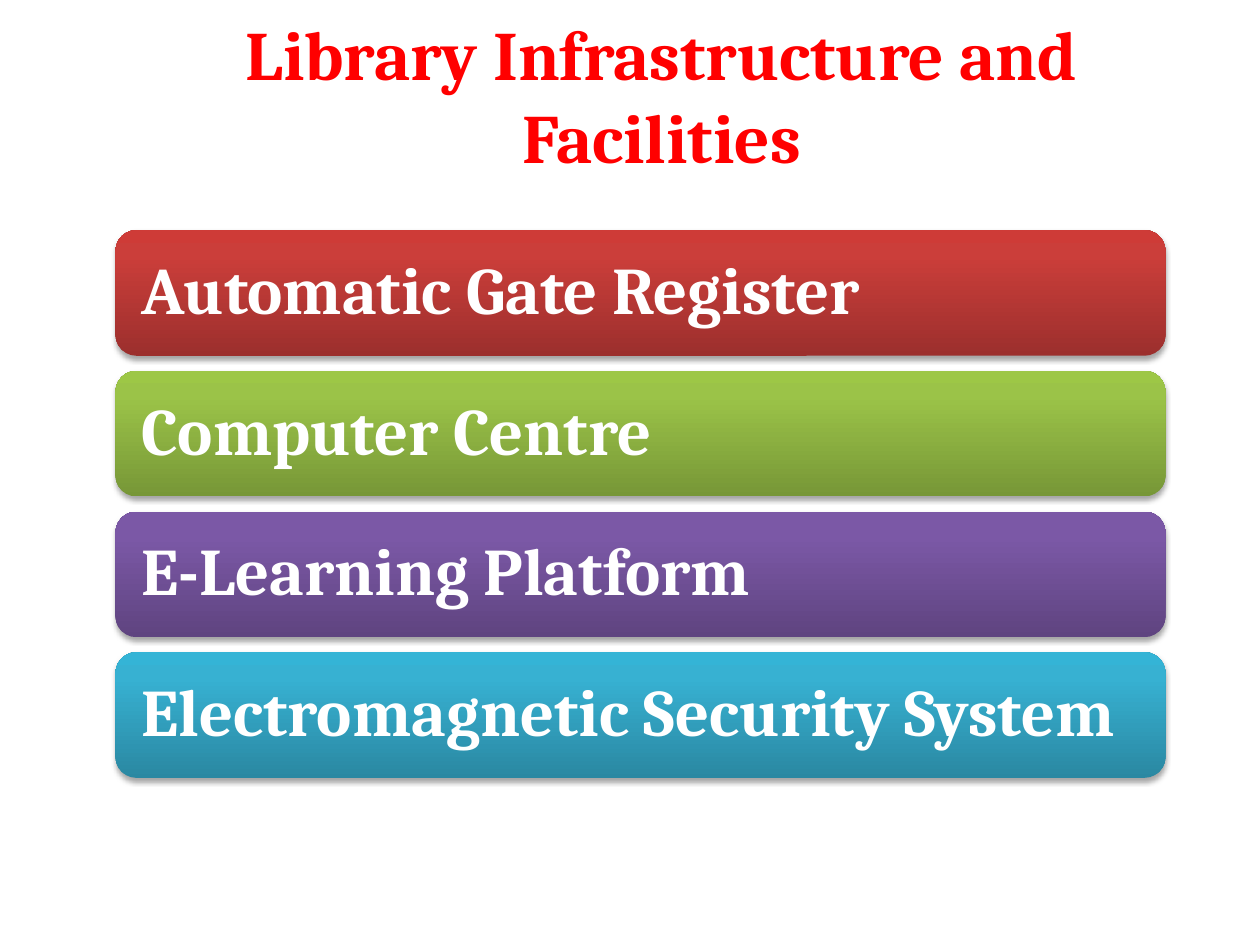
from lxml import etree
from pptx import Presentation
from pptx.dml.color import RGBColor
from pptx.enum.shapes import MSO_SHAPE as Shape
from pptx.enum.text import MSO_ANCHOR as Anchor, MSO_AUTO_SIZE as AutoSize, PP_ALIGN as Align
from pptx.oxml import parse_xml
from pptx.oxml.ns import nsdecls, qn
from pptx.util import Pt

TITLE = "Library Infrastructure and Facilities"
# Facility, gradient colours from bottom to top
FACILITIES = [
    ("Automatic Gate Register", ("9C2F2D", "CB3E3A", "CE3B37")),
    ("Computer Centre", ("779737", "9BC348", "9DC746")),
    ("E-Learning Platform", ("5F4480", "7B58A6", "7C57A8")),
    ("Electromagnetic Security System", ("2A88A2", "37B1D2", "34B4D6")),
]
STOPS = (0, 80, 100)
FONT = "Cambria"
BAR_LEFT, BAR_TOP, BAR_WIDTH, BAR_HEIGHT = 66, 131.5, 600, 71.8
BAR_PITCH = 80.4
BAR_INSET = 11.4


def style_text(frame, size, color, align):
    frame.word_wrap = True
    frame.auto_size = AutoSize.NONE
    frame.vertical_anchor = Anchor.MIDDLE
    paragraph = frame.paragraphs[0]
    paragraph.alignment = align
    font = paragraph.runs[0].font
    font.name, font.size, font.bold = FONT, Pt(size), True
    font.color.rgb = RGBColor.from_string(color)


def fill_upward(bar, colors):
    """Fill the bar with a three-stop gradient running from bottom to top."""
    bar.fill.gradient()
    bar.fill.gradient_angle = 90
    stops = bar._element.spPr.find(qn("a:gradFill")).find(qn("a:gsLst"))
    for stop in list(stops):
        stops.remove(stop)
    for position, color in zip(STOPS, colors):
        stop = etree.SubElement(stops, qn("a:gs"), pos=str(position * 1000))
        etree.SubElement(stop, qn("a:srgbClr"), val=color)


def add_shadow(bar):
    bar.shadow.inherit = False
    effects = bar._element.spPr.find(qn("a:effectLst"))
    effects.append(parse_xml(
        f'<a:outerShdw {nsdecls("a")} blurRad="{Pt(3.1)}" dist="{Pt(1.8)}" '
        'dir="5400000" rotWithShape="0"><a:srgbClr val="000000">'
        '<a:alpha val="35000"/></a:srgbClr></a:outerShdw>'))


def add_bar(slide, index, facility, colors):
    bar = slide.shapes.add_shape(
        Shape.ROUNDED_RECTANGLE, Pt(BAR_LEFT), Pt(BAR_TOP + index * BAR_PITCH),
        Pt(BAR_WIDTH), Pt(BAR_HEIGHT))
    fill_upward(bar, colors)
    bar.line.fill.background()
    add_shadow(bar)
    frame = bar.text_frame
    frame.text = facility
    frame.margin_left = frame.margin_right = Pt(BAR_INSET)
    frame.margin_top = frame.margin_bottom = Pt(BAR_INSET)
    style_text(frame, 38, "FFFFFF", Align.LEFT)
    frame.paragraphs[0].line_spacing = 0.9


def main():
    deck = Presentation()
    deck.slide_width, deck.slide_height = Pt(720), Pt(540)
    slide = deck.slides.add_slide(deck.slide_layouts[5])
    for index, (facility, colors) in enumerate(FACILITIES):
        add_bar(slide, index, facility, colors)

    title = slide.shapes.title
    title.left, title.top, title.width, title.height = Pt(72), Pt(18), Pt(612), Pt(72)
    title.text_frame.text = TITLE
    style_text(title.text_frame, 39.6, "FF0000", Align.CENTER)
    deck.save("out.pptx")


if __name__ == "__main__":
    main()
